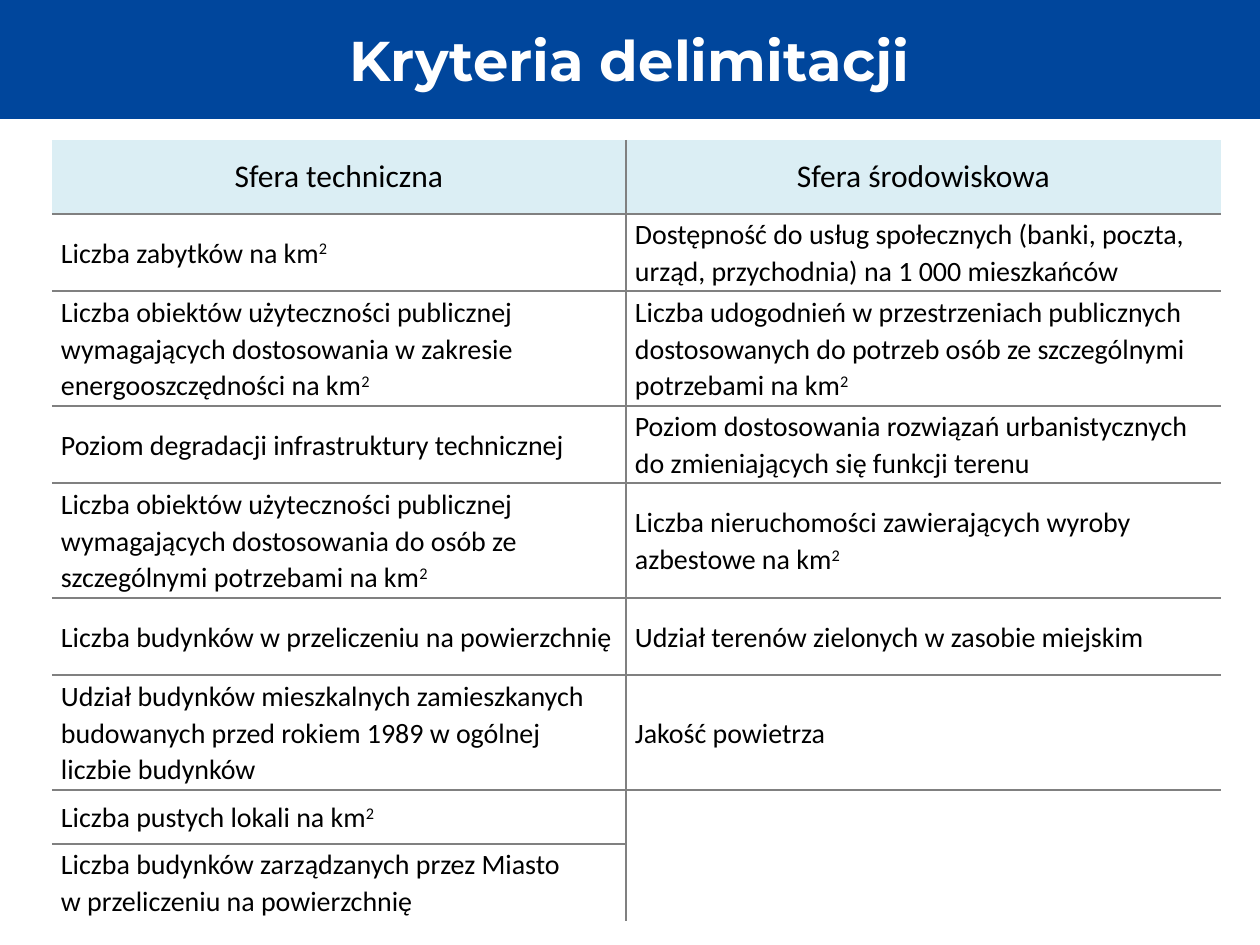
from dataclasses import dataclass

from lxml import etree
from pptx import Presentation
from pptx.dml.color import RGBColor
from pptx.enum.shapes import MSO_SHAPE
from pptx.enum.text import MSO_ANCHOR, PP_ALIGN
from pptx.oxml.ns import qn
from pptx.util import Emu, Pt

PX = 914400 // 126


@dataclass(frozen=True)
class Theme:
    blue: str = "00469C"
    header: str = "DBEEF4"
    white: str = "FFFFFF"
    black: str = "000000"
    rule: str = "808080"
    title_font: str = "Montserrat"
    body_font: str = "Calibri"
    title_size: int = 32
    header_size: int = 18
    body_size: int = 16


T = Theme()


def style(r, font, size, color, bold=False):
    r.font.name = font
    r.font.size = Pt(size)
    r.font.bold = bold
    r.font.color.rgb = RGBColor.from_string(color)


def border(cell, side, visible):
    ln = etree.SubElement(cell._tc.get_or_add_tcPr(), qn(f"a:ln{side}"), w=str(Pt(1)))
    if visible:
        fill = etree.SubElement(ln, qn("a:solidFill"))
        etree.SubElement(fill, qn("a:srgbClr"), val=T.rule)
    else:
        etree.SubElement(ln, qn("a:noFill"))


prs = Presentation()
prs.slide_width, prs.slide_height = Emu(1260 * PX), Emu(945 * PX)
s = prs.slides.add_slide(prs.slide_layouts[6])

# Title band
sp = s.shapes.add_shape(MSO_SHAPE.RECTANGLE, 0, 0, prs.slide_width, 119 * PX)
sp.shadow.inherit = False
sp.fill.solid()
sp.fill.fore_color.rgb = RGBColor.from_string(T.blue)
sp.line.fill.background()
tf = sp.text_frame
tf.text = "Kryteria delimitacji"
tf.vertical_anchor = MSO_ANCHOR.MIDDLE
tf.paragraphs[0].alignment = PP_ALIGN.CENTER
style(tf.paragraphs[0].runs[0], T.title_font, T.title_size, T.white, True)

# Criteria: row height, technical, environmental; a final ^2 is a superscript
rows = [
    (74, "Sfera techniczna", "Sfera środowiskowa"),
    (77, "Liczba zabytków na km^2",
     "Dostępność do usług społecznych (banki, poczta, urząd, przychodnia) na 1 000 mieszkańców"),
    (115, "Liczba obiektów użyteczności publicznej wymagających dostosowania "
     "w zakresie energooszczędności na km^2",
     "Liczba udogodnień w przestrzeniach publicznych dostosowanych do potrzeb osób "
     "ze szczególnymi potrzebami na km^2"),
    (77, "Poziom degradacji infrastruktury technicznej",
     "Poziom dostosowania rozwiązań urbanistycznych do zmieniających się funkcji terenu"),
    (115, "Liczba obiektów użyteczności publicznej wymagających dostosowania do osób "
     "ze szczególnymi potrzebami na km^2",
     "Liczba nieruchomości zawierających wyroby azbestowe na km^2"),
    (77, "Liczba budynków w przeliczeniu na powierzchnię",
     "Udział terenów zielonych w zasobie miejskim"),
    (115, "Udział budynków mieszkalnych zamieszkanych budowanych przed rokiem 1989 "
     "w ogólnej liczbie budynków", "Jakość powietrza"),
    (54, "Liczba pustych lokali na km^2", ""),
    (77, "Liczba budynków zarządzanych przez Miasto \vw przeliczeniu na powierzchnię", ""),
]
widths = [574, 595]
heights = [row[0] for row in rows]
last = len(rows) - 1

# Table grid
tbl = s.shapes.add_table(len(rows), 2, 52 * PX, 140 * PX,
                         sum(widths) * PX, sum(heights) * PX).table
tbl.first_row = tbl.horz_banding = False
for col, width in zip(tbl.columns, widths):
    col.width = width * PX
for row, height in zip(tbl.rows, heights):
    row.height = height * PX
tbl.cell(last - 1, 1).merge(tbl.cell(last, 1))

# Cells with inner rules only
for i, (_, *texts) in enumerate(rows):
    for j, text in enumerate(texts):
        cell = tbl.cell(i, j)
        in_merge = j == 1 and i >= last - 1
        border(cell, "L", j == 1)
        border(cell, "R", j == 0)
        border(cell, "T", i > 0 and not (in_merge and i == last))
        border(cell, "B", i < last and not in_merge)
        cell.fill.solid()
        cell.fill.fore_color.rgb = RGBColor.from_string(T.white if i else T.header)
        cell.vertical_anchor = MSO_ANCHOR.MIDDLE
        if not text:
            continue
        p = cell.text_frame.paragraphs[0]
        base, _, power = text.partition("^")
        p.text = base
        if power:
            r = p.add_run()
            r.text = power
            r.font._element.set("baseline", "30000")
        if i:
            cell.margin_left = cell.margin_right = 9 * PX
            cell.margin_top = cell.margin_bottom = 0
            p.line_spacing = 1.07
        else:
            p.alignment = PP_ALIGN.CENTER
        for r in p.runs:
            style(r, T.body_font, T.body_size if i else T.header_size, T.black)

prs.save("out.pptx")
